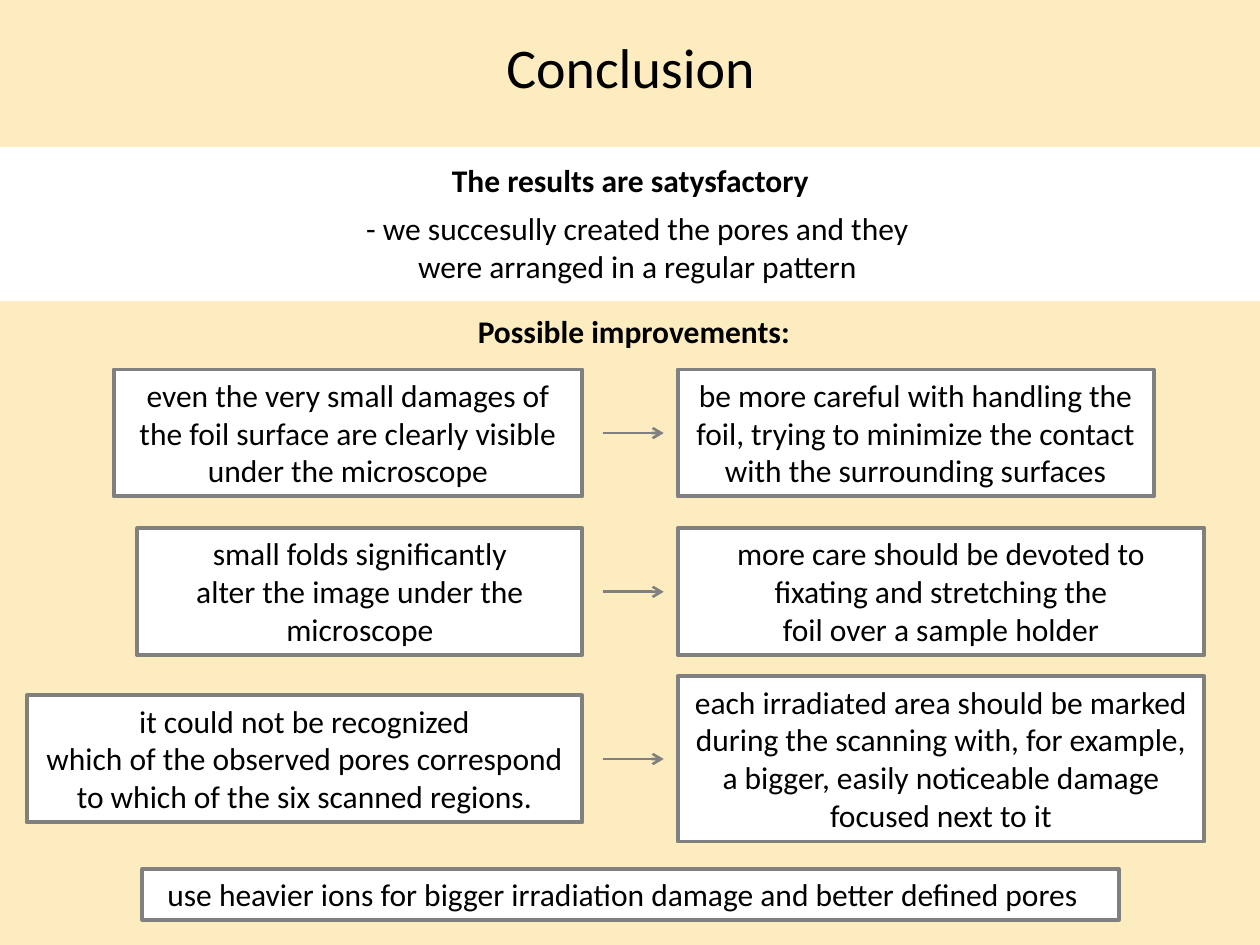
import pptx
import pptx.util
from pptx.dml.color import RGBColor
from pptx.enum.shapes import MSO_CONNECTOR, MSO_SHAPE
from pptx.enum.text import MSO_ANCHOR, PP_ALIGN
from pptx.oxml.ns import qn
from lxml import etree

Cm, Pt = pptx.util.Cm, pptx.util.Pt

CREAM = RGBColor(0xFC, 0xEC, 0xC0)
WHITE = RGBColor(0xFF, 0xFF, 0xFF)
GRAY = RGBColor(0x80, 0x80, 0x80)
BLACK = RGBColor(0, 0, 0)

# Content: lengths in cm
BANDS = [(-1.07, -0.56, 28.37, 3.53), (0, 6.07, 25.4, 12.98)]

# Text, left, top, width, height, size, bold
LABELS = [
    ("Conclusion", 3.99, 0.53, 17.45, 1.63, 32, False),
    ("The results are satysfactory", 8.71, 3.12, 8, 1.02, 18, True),
    ("- we succesully created the pores and they were arranged in a regular pattern",
     6.93, 4.09, 11.84, 1.79, 18, False),
    ("Possible improvements:", 5.82, 6.17, 13.92, 1.02, 18, True),
]

# Row centre, then problem and remedy as (text, width, line count)
ROWS = [
    (8.73,
     ("even the very small damages of the foil surface are clearly visible "
      "under the microscope", 9.45, 3),
     ("be more careful with handling the foil, trying to minimize the contact "
      "with the surrounding surfaces", 9.6, 3)),
    (11.93,
     ("small folds significantly\nalter the image under the microscope", 8.97, 3),
     ("more care should be devoted to fixating and stretching the\n"
      "foil over a sample holder", 10.62, 3)),
    (15.3,
     ("it could not be recognized\nwhich of the observed pores correspond "
      "to which of the six scanned regions.", 11.2, 3),
     ("each irradiated area should be marked during the scanning with, for example,\n"
      "a bigger, easily noticeable damage focused next to it", 10.62, 4)),
]
FINAL = "use heavier ions for bigger irradiation damage and better defined pores"

LEFT_END, RIGHT_START = 11.74, 13.66
ARROW_START, ARROW_END = 12.15, 13.38
LINE, PAD = 0.77, 0.25

deck = pptx.Presentation()
deck.slide_width, deck.slide_height = Cm(25.4), Cm(19.05)
slide = deck.slides.add_slide(deck.slide_layouts[6])
shapes = slide.shapes


def write(shape, text, size=18, bold=False):
    frame = shape.text_frame
    frame.text = text
    frame.word_wrap = True
    for para in frame.paragraphs:
        para.alignment = PP_ALIGN.CENTER
        for run in para.runs:
            font = run.font
            font.name, font.size, font.bold = "Calibri", Pt(size), bold
            font.color.rgb = BLACK


def add_rect(place, fill):
    rect = shapes.add_shape(MSO_SHAPE.RECTANGLE, *map(Cm, place))
    rect.shadow.inherit = False
    rect.fill.solid()
    rect.fill.fore_color.rgb = fill
    rect.line.fill.background()
    return rect


def add_card(text, left, middle, width, lines):
    height = lines * LINE + PAD
    card = add_rect((left, middle - height / 2, width, height), WHITE)
    card.line.color.rgb = GRAY
    card.line.width = Pt(2.25)
    write(card, text)
    card.text_frame.vertical_anchor = MSO_ANCHOR.TOP
    return card


def add_arrow(middle):
    y = Cm(middle)
    arrow = shapes.add_connector(
        MSO_CONNECTOR.STRAIGHT, Cm(ARROW_START), y, Cm(ARROW_END), y)
    arrow.line.color.rgb = GRAY
    arrow.line.width = Pt(1.5)
    etree.SubElement(arrow.line._get_or_add_ln(), qn("a:tailEnd"), type="arrow")
    etree.SubElement(arrow._element.spPr, qn("a:effectLst"))


# Background bands and headings
for band in BANDS:
    add_rect(band, CREAM)
for text, left, top, width, height, size, bold in LABELS:
    box = shapes.add_textbox(Cm(left), Cm(top), Cm(width), Cm(height))
    write(box, text, size, bold)

# Problems on the left, remedies on the right
for middle, (cause, wide, lines), (cure, span, count) in ROWS:
    add_card(cause, LEFT_END - wide, middle, wide, lines)
    add_card(cure, RIGHT_START, middle, span, count)
    add_arrow(middle)

# Last suggestion, set slightly left of centre
final = add_card(FINAL, 2.87, 18.03, 19.69, 1)
final.text_frame.margin_right = Cm(0.57)

deck.save("out.pptx")
